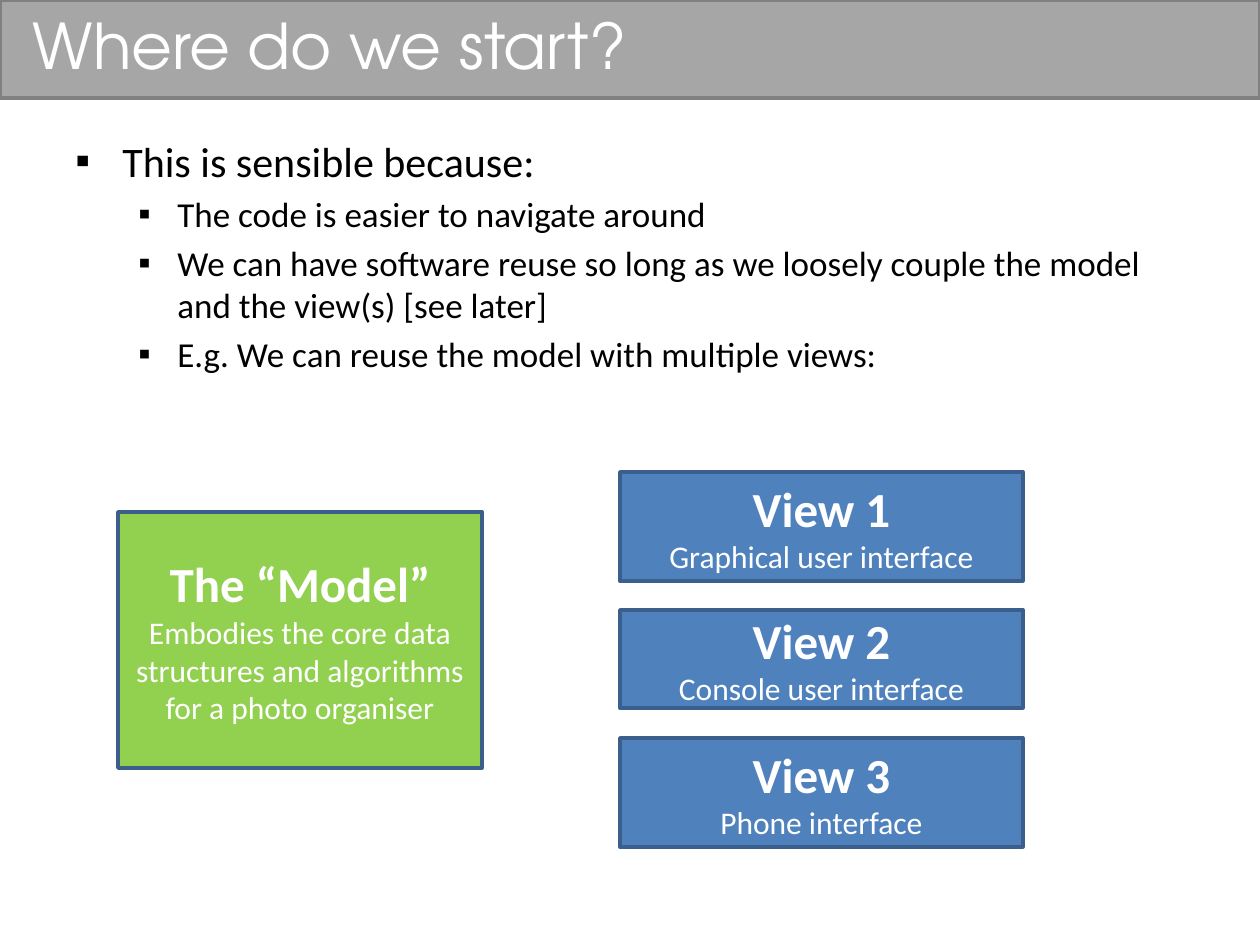
from lxml.etree import SubElement
from pptx import Presentation
from pptx.dml.color import RGBColor
from pptx.enum.shapes import MSO_SHAPE
from pptx.enum.text import MSO_ANCHOR, MSO_AUTO_SIZE, PP_ALIGN
from pptx.oxml.ns import qn
from pptx.util import Emu, Pt

SCALE = 914400 / 126
WHITE = "FFFFFF"
EDGE = "3A5F8C"
BLUE = "4F81BD"
POINTS = [
    (0, "This is sensible because:"),
    (1, "The code is easier to navigate around"),
    (1, "We can have software reuse so long as we loosely couple "
        "the model and the view(s) [see later]"),
    (1, "E.g. We can reuse the model with multiple views:"),
]
LEVELS = [(24, 47, 47, 5), (20, 102, 39, 4)]
VIEWS = [
    (472, 109, "View 1", "Graphical user interface"),
    (610, 98, "View 2", "Console user interface"),
    (738, 109, "View 3", "Phone interface"),
]


def px(n):
    return Emu(round(n * SCALE))


def color(code):
    return RGBColor.from_string(code)


def style(para, size, code, face="Calibri", bold=False):
    font = para.font
    font.size, font.name, font.bold = Pt(size), face, bold
    font.color.rgb = color(code)


def add_rect(slide, x, y, w, h, fill, edge):
    rect = slide.shapes.add_shape(MSO_SHAPE.RECTANGLE, px(x), px(y), px(w), px(h))
    rect.shadow.inherit = False
    rect.fill.solid()
    rect.fill.fore_color.rgb = color(fill)
    rect.line.color.rgb = color(edge)
    rect.line.width = Pt(2)
    return rect


def add_box(slide, x, y, w, h, fill, head, note):
    frame = add_rect(slide, x, y, w, h, fill, EDGE).text_frame
    frame.word_wrap = True
    frame.vertical_anchor = MSO_ANCHOR.MIDDLE
    frame.text = f"{head}\n{note}"
    for para, size, bold in zip(frame.paragraphs, (28, 18), (True, False)):
        para.alignment = PP_ALIGN.CENTER
        style(para, size, WHITE, bold=bold)


def set_title(slide, text):
    title = slide.shapes.title
    title.left, title.top, title.width, title.height = px(20), px(0), px(1201), px(88)
    frame = title.text_frame
    frame.text = text
    frame.auto_size = MSO_AUTO_SIZE.NONE
    frame.vertical_anchor = MSO_ANCHOR.MIDDLE
    para = frame.paragraphs[0]
    para.alignment = PP_ALIGN.LEFT
    style(para, 36, WHITE, "TeX Gyre Adventor")


def add_bullet(para, left, hang):
    props = para._p.get_or_add_pPr()
    props.set("marL", str(px(left)))
    props.set("indent", str(-px(hang)))
    SubElement(props, qn("a:buFont"), typeface="Arial")
    SubElement(props, qn("a:buChar"), char="▪")


def add_list(slide, x, y, w, h, points):
    frame = slide.shapes.add_textbox(px(x), px(y), px(w), px(h)).text_frame
    frame.word_wrap = True
    frame.text = "\n".join(text for _, text in points)
    for para, (level, _) in zip(frame.paragraphs, points):
        size, left, hang, gap = LEVELS[level]
        para.level = level
        para.space_before = Pt(gap)
        add_bullet(para, left, hang)
        style(para, size, "000000")


def main():
    deck = Presentation()
    deck.slide_width, deck.slide_height = px(1260), px(945)
    slide = deck.slides.add_slide(deck.slide_layouts[5])
    bar = add_rect(slide, 0, 0, 1260, 98, "A6A6A6", "808080")
    set_title(slide, "Where do we start?")
    bar._element.addnext(slide.shapes.title._element)
    add_list(slide, 63, 129, 1134, 758, POINTS)
    add_box(slide, 118, 512, 364, 256, "92D050", "The “Model”",
            "Embodies the core data structures and algorithms for a photo organiser")
    for y, h, head, note in VIEWS:
        add_box(slide, 620, y, 403, h, BLUE, head, note)
    deck.save("out.pptx")


if __name__ == "__main__":
    main()
